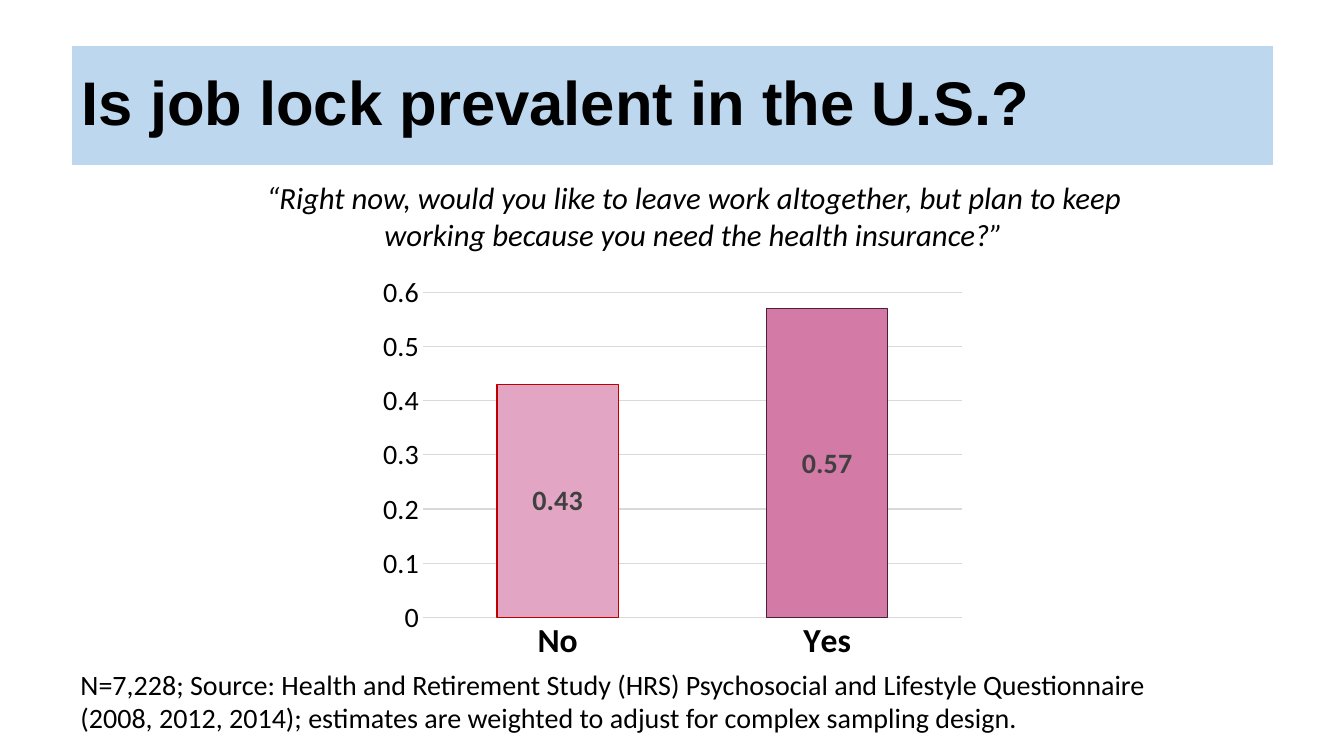
from pptx import Presentation
from pptx.chart.data import CategoryChartData
from pptx.dml.color import RGBColor
from pptx.enum.chart import XL_CHART_TYPE, XL_LABEL_POSITION, XL_TICK_MARK
from pptx.enum.text import MSO_ANCHOR, PP_ALIGN
from pptx.util import Inches, Pt

TITLE = "Is job lock prevalent in the U.S.?"
QUESTION = [
    "“Right now, would you like to leave work altogether, but plan to keep "
    "working because you need the health insurance?”"
]
SOURCE_NOTE = [
    "N=7,228; Source: Health and Retirement Study (HRS) Psychosocial and Lifestyle Questionnaire",
    "(2008, 2012, 2014); estimates are weighted to adjust for complex sampling design.",
]
ANSWERS = {"No": 0.43, "Yes": 0.57}

BLACK = RGBColor(0x00, 0x00, 0x00)
WHITE = RGBColor(0xFF, 0xFF, 0xFF)
TITLE_BLUE = RGBColor(0xBD, 0xD7, 0xEE)
GRID_GRAY = RGBColor(0xD9, 0xD9, 0xD9)
LABEL_GRAY = RGBColor(0x40, 0x40, 0x40)
RED = RGBColor(0xC0, 0x00, 0x00)
PLUM = RGBColor(0x4A, 0x20, 0x38)
BAR_STYLES = [(RGBColor(0xE2, 0xA6, 0xC4), RED), (RGBColor(0xD4, 0x7A, 0xA7), PLUM)]

COLUMN = XL_CHART_TYPE.COLUMN_CLUSTERED
CENTER_LABEL = XL_LABEL_POSITION.CENTER
NO_TICK = XL_TICK_MARK.NONE
MIDDLE = MSO_ANCHOR.MIDDLE
LEFT = PP_ALIGN.LEFT
CENTER = PP_ALIGN.CENTER


def style_font(font, size, color=BLACK, bold=False, name="Calibri"):
    font.name = name
    font.size = Pt(size)
    font.bold = bold
    font.color.rgb = color


def style_line(line, color):
    line.color.rgb = color
    line.width = Pt(0.75)


def add_text(slide, box, lines, size, alignment=LEFT, italic=False, level=0):
    frame = slide.shapes.add_textbox(*map(Inches, box)).text_frame
    frame.word_wrap = True
    frame.text = "\n".join(lines)
    for paragraph in frame.paragraphs:
        paragraph.alignment = alignment
        paragraph.level = level
        style_font(paragraph.font, size)
        paragraph.font.italic = italic
        properties = paragraph._p.get_or_add_pPr()
        properties.set("marL", str(Inches(0.5) * level))
        properties.set("indent", "0")


def add_title(slide):
    title = slide.shapes.title
    title.left, title.top = Inches(0.71), Inches(0.45)
    title.width, title.height = Inches(11.92), Inches(1.19)
    title.fill.solid()
    title.fill.fore_color.rgb = TITLE_BLUE
    style_line(title.line, WHITE)
    frame = title.text_frame
    frame.text = TITLE
    frame.vertical_anchor = MIDDLE
    paragraph = frame.paragraphs[0]
    paragraph.alignment = LEFT
    paragraph.line_spacing = 0.9
    style_font(paragraph.font, 44, bold=True, name="Arial")


def add_answer_chart(slide):
    data = CategoryChartData(number_format="#,##0.00")
    data.categories = list(ANSWERS)
    data.add_series("Series 1", list(ANSWERS.values()))
    box = map(Inches, (3.68, 2.65, 5.98, 4))
    chart = slide.shapes.add_chart(COLUMN, *box, data).chart
    chart.has_title = False
    chart.has_legend = False
    style_font(chart.font, 10)

    category_axis, value_axis = chart.category_axis, chart.value_axis
    for axis, size, bold in ((category_axis, 24, True), (value_axis, 20, False)):
        axis.major_tick_mark = axis.minor_tick_mark = NO_TICK
        style_font(axis.tick_labels.font, size, bold=bold)
    style_line(category_axis.format.line, GRID_GRAY)
    value_axis.format.line.fill.background()
    value_axis.minimum_scale = 0
    value_axis.maximum_scale = 0.6
    value_axis.major_unit = 0.1
    value_axis.tick_labels.number_format = "General"
    value_axis.tick_labels.number_format_is_linked = False
    style_line(value_axis.major_gridlines.format.line, GRID_GRAY)

    plot = chart.plots[0]
    plot.vary_by_categories = False
    plot.gap_width = 122
    plot.overlap = -27
    series = plot.series[0]
    style_line(series.format.line, RED)
    for index, (fill_color, line_color) in enumerate(BAR_STYLES):
        bar = series.points[index].format
        bar.fill.solid()
        bar.fill.fore_color.rgb = fill_color
        style_line(bar.line, line_color)

    labels = series.data_labels
    labels.show_value = True
    labels.position = CENTER_LABEL
    labels.number_format = "#,##0.00"
    labels.number_format_is_linked = False
    style_font(labels.font, 20, LABEL_GRAY, bold=True)


def main():
    presentation = Presentation()
    presentation.slide_width = Inches(13.33)
    presentation.slide_height = Inches(7.5)
    slide = presentation.slides.add_slide(presentation.slide_layouts[5])
    add_title(slide)
    add_text(slide, (2.24, 1.72, 9.28, 0.84), QUESTION, 22, CENTER, italic=True)
    add_answer_chart(slide)
    add_text(slide, (0.2, 6.57, 13.6, 0.77), SOURCE_NOTE, 20, level=1)
    presentation.save("out.pptx")


if __name__ == "__main__":
    main()
